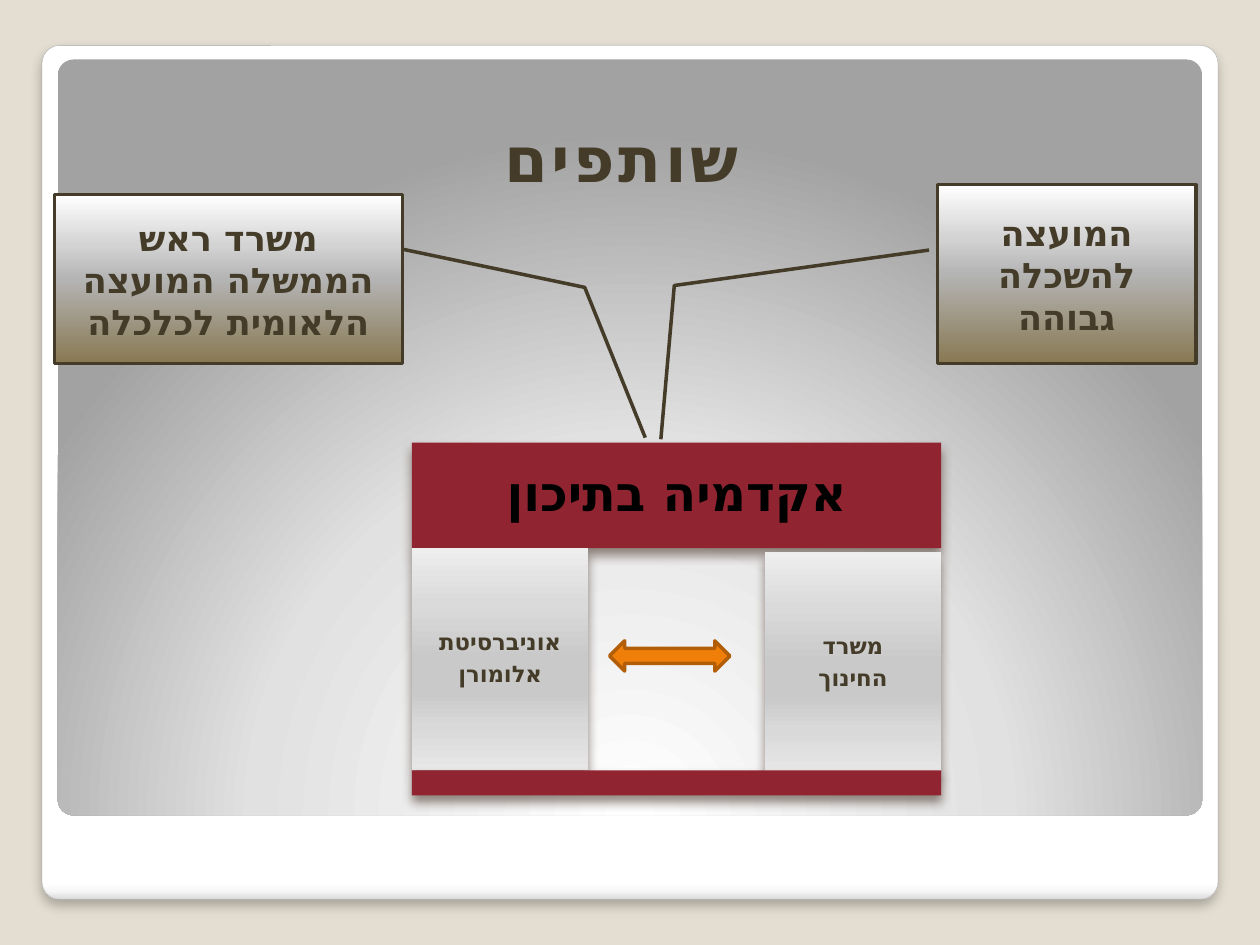
from lxml import etree
from pptx import Presentation
from pptx.dml.color import RGBColor
from pptx.enum import shapes, text
from pptx.oxml.ns import qn
from pptx.util import Pt

COLORS = {
    "backdrop": "E3DED1", "frame": "A4A4A4", "brown": "443C29", "black": "000000",
    "red": "902531", "shade": "4E3B30", "orange": "F07F09", "rust": "B25E07",
}
FONT = "DejaVu Sans"
KIND = shapes.MSO_SHAPE
FRAME_STOPS = [(0, "FFFFFF"), (98, "FFFFFF"), (99, "F7F7F7"), (100, "DADADA")]
PANEL_STOPS = [(0, "FFFFFF"), (55, "E1E1E1"), (100, "A2A2A2")]
PILLAR_STOPS = [(0, "EEEEEE"), (25, "DADADA"), (50, "C9C9C9"),
                (65, "C9C9C9"), (80, "D9D9D9"), (100, "E7E7E7")]
CALLOUT_STOPS = [(0, "887952"), (50, "B4B4B4"), (70, "D3D3D3"), (100, "FFFFFF")]

deck = Presentation()
deck.slide_width, deck.slide_height = Pt(720), Pt(540)
page = deck.slides.add_slide(deck.slide_layouts[5])
page.background.fill.solid()
page.background.fill.fore_color.rgb = RGBColor.from_string(COLORS["backdrop"])


def add_box(kind, place, fill, angle=90, line=None, shadow=None, adjust=()):
    """Add a shape; fill is a colour name or gradient stops, angle None is circular."""
    box = page.shapes.add_shape(kind, *[Pt(length) for length in place])
    for index, value in enumerate(adjust):
        box.adjustments[index] = value
    if isinstance(fill, str):
        box.fill.solid()
        box.fill.fore_color.rgb = RGBColor.from_string(COLORS[fill])
    else:
        box.fill.gradient()
        grad = box.element.spPr.find(qn("a:gradFill"))
        for child in list(grad):
            grad.remove(child)
        stops = etree.SubElement(grad, qn("a:gsLst"))
        for position, color in fill:
            stop = etree.SubElement(stops, qn("a:gs"), pos=str(position * 1000))
            etree.SubElement(stop, qn("a:srgbClr"), val=color)
        if angle is None:
            circle = etree.SubElement(grad, qn("a:path"), path="circle")
            etree.SubElement(circle, qn("a:fillToRect"),
                             l="50000", t="175000", r="50000", b="-75000")
        else:
            etree.SubElement(grad, qn("a:lin"), ang=str(angle * 60000), scaled="0")
    if line:
        box.line.color.rgb = RGBColor.from_string(COLORS[line[0]])
        box.line.width = Pt(line[1])
    else:
        box.line.fill.background()
    box.shadow.inherit = False
    if shadow:
        color, alpha = shadow
        outer = etree.SubElement(
            box.element.spPr.find(qn("a:effectLst")), qn("a:outerShdw"),
            blurRad=str(Pt(6)), dist=str(Pt(4)), dir="5400000", rotWithShape="0")
        tint = etree.SubElement(outer, qn("a:srgbClr"), val=COLORS[color])
        etree.SubElement(tint, qn("a:alpha"), val=str(alpha * 1000))
    return box


def write(box, lines, size, color, inset=7.2, spacing=None, before=0, after=0):
    """Fill a shape with centred right-to-left bold lines."""
    frame = box.text_frame
    frame.word_wrap = True
    frame.vertical_anchor = text.MSO_ANCHOR.MIDDLE
    frame.margin_left = frame.margin_right = Pt(inset)
    frame.margin_top = frame.margin_bottom = Pt(inset)
    for index, line in enumerate(lines):
        para = frame.add_paragraph() if index else frame.paragraphs[0]
        para.alignment = text.PP_ALIGN.CENTER
        para.line_spacing = spacing
        para.space_before, para.space_after = Pt(before), Pt(after)
        para._p.get_or_add_pPr().set("rtl", "1")
        span = para.add_run()
        span.text = line
        span.font.size, span.font.bold, span.font.name = Pt(size), True, FONT
        span.font.color.rgb = RGBColor.from_string(COLORS[color])
        etree.SubElement(span._r.get_or_add_rPr(), qn("a:cs"), typeface=FONT)


# Framed background panel
add_box(KIND.ROUNDED_RECTANGLE, (24, 26, 672, 488), FRAME_STOPS,
        line=("frame", 0.16), shadow=("black", 25), adjust=[0.021])
add_box(KIND.ROUNDED_RECTANGLE, (33, 34, 654, 432), PANEL_STOPS, angle=None, adjust=[0.021])

# Title
title = page.shapes.title
title.left, title.top, title.width, title.height = Pt(31), Pt(31.7), Pt(648), Pt(111.6)
write(title, ["שותפים"], 36, "brown")
title.text_frame.vertical_anchor = text.MSO_ANCHOR.BOTTOM
title.text_frame.margin_bottom = Pt(32)
title.text_frame.paragraphs[0].runs[0].font._element.set("spc", "200")
title.element.getparent().append(title.element)

# Programme building: roof, two pillars and base
left, width = 235.4, 302.4
pillar = width / 3
roof = add_box(KIND.RECTANGLE, (left, 252.9, width, 60.4), "red", shadow=("shade", 60))
write(roof, ["אקדמיה בתיכון"], 28, "black", inset=8.64, spacing=0.9, after=9.8)
for column, top, lines in [(0, 313.3, ["אוניברסיטת", "אלומורן"]),
                           (2, 315.4, ["משרד", "החינוך"])]:
    box = add_box(KIND.RECTANGLE, (left + column * pillar, top, pillar, 126.8),
                  PILLAR_STOPS, shadow=("shade", 60))
    write(box, lines, 13, "brown", inset=3.6, spacing=0.9, after=4.5)
add_box(KIND.RECTANGLE, (left, 440.2, width, 14.4), "red", shadow=("shade", 60))
add_box(KIND.LEFT_RIGHT_ARROW, (348.3, 366.2, 68.8, 17.3), "orange", line=("rust", 2))

# Partner callouts pointing at the building
for place, adjust, line in [
    ((535.7, 105.5, 147.6, 102.2), [0.366, -0.033, 0.564, -1.019, 1.424, -1.071],
     "המועצה להשכלה גבוהה"),
    ((31, 111.3, 198.9, 96.5), [0.322, 0.999, 0.549, 1.524, 1.439, 1.698],
     "משרד ראש הממשלה המועצה הלאומית לכלכלה"),
]:
    callout = add_box(KIND.LINE_CALLOUT_2, place, CALLOUT_STOPS, angle=270,
                      line=("brown", 2), adjust=adjust)
    write(callout, [line], 20, "brown", before=4)

deck.save("out.pptx")
